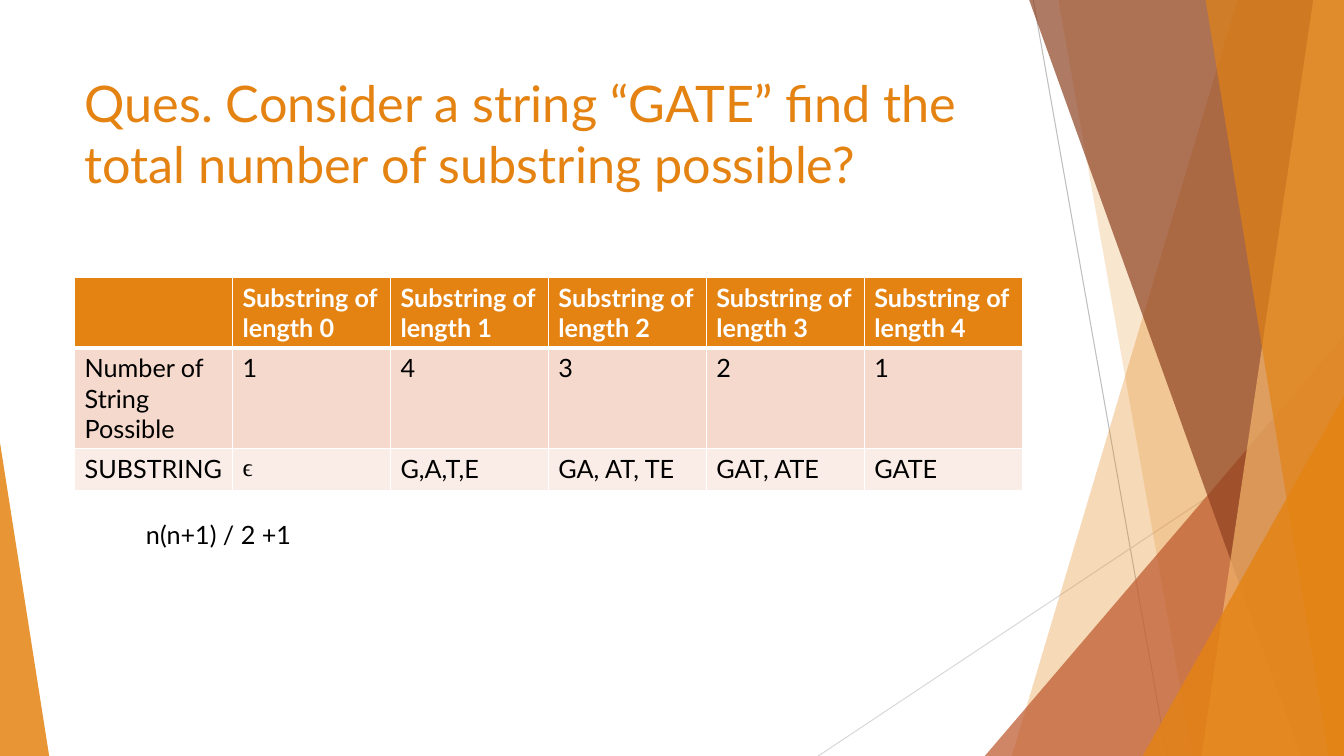
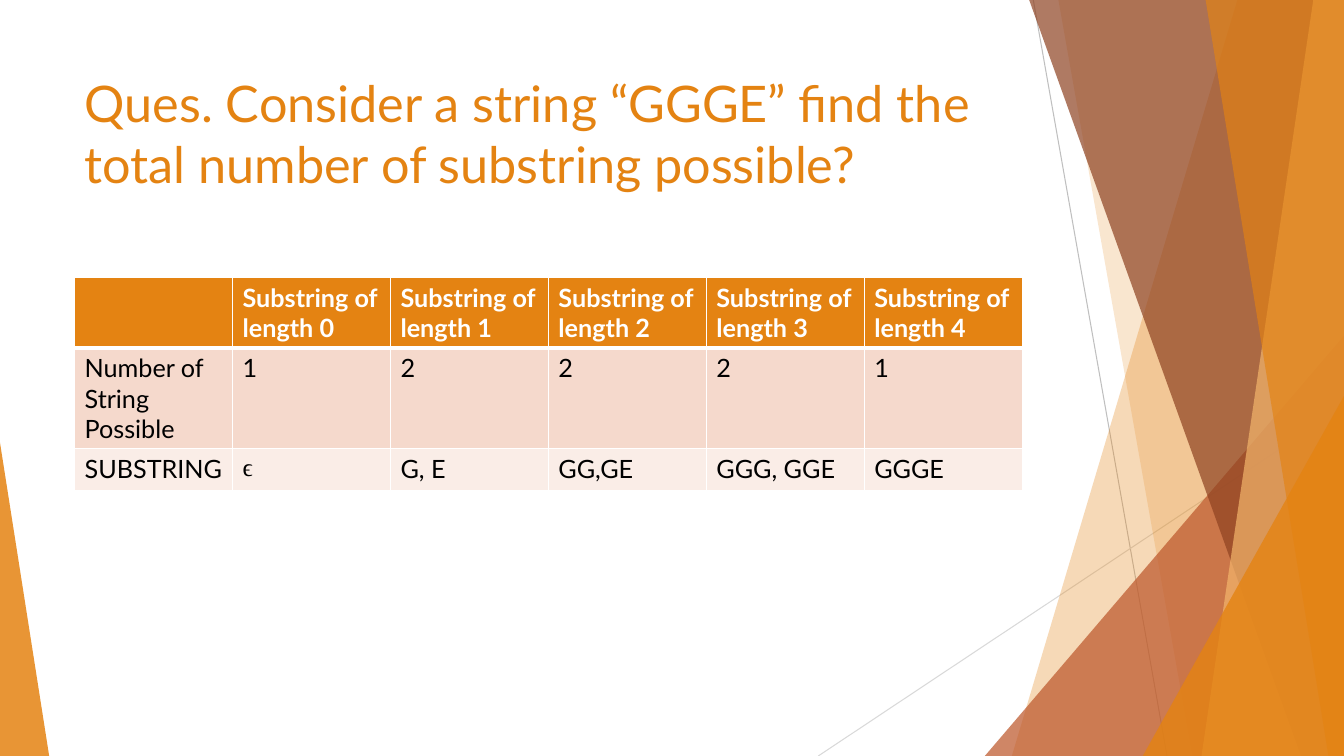
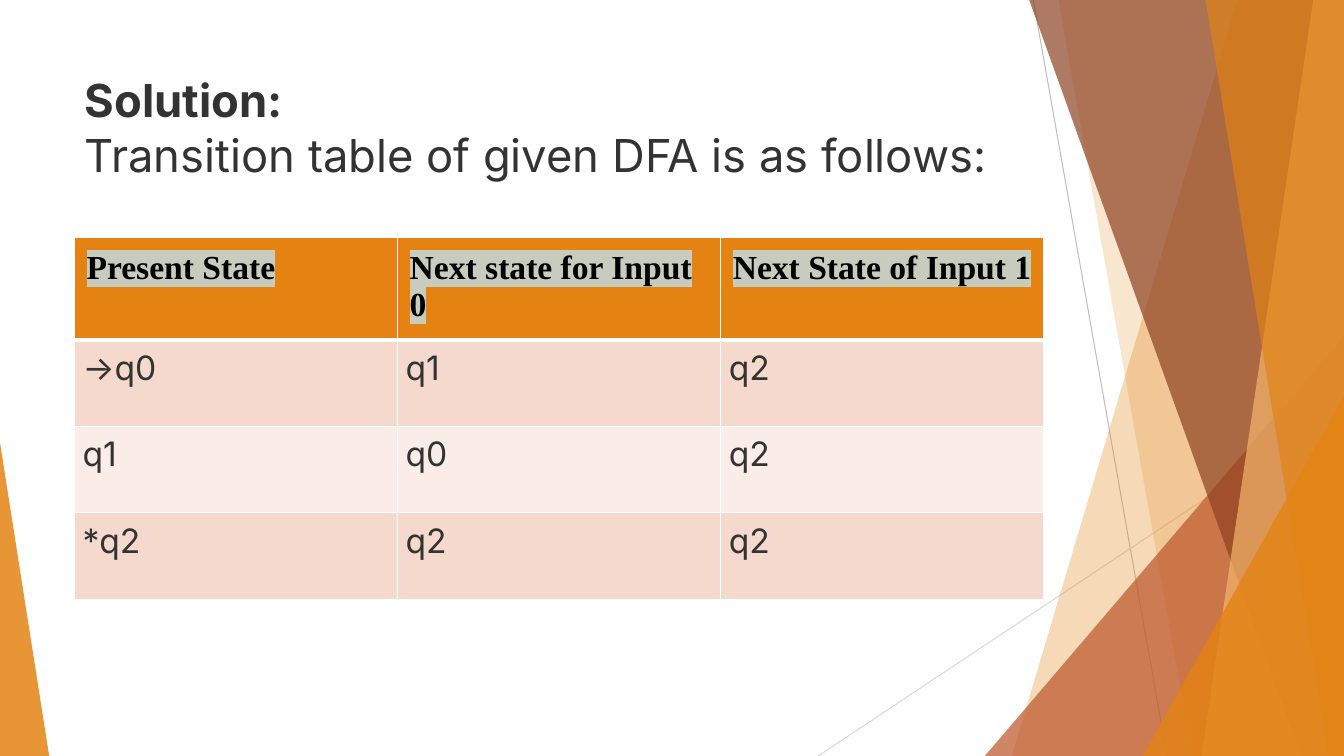
from lxml.etree import SubElement
from pptx import Presentation
from pptx.dml.color import RGBColor
from pptx.enum.shapes import MSO_CONNECTOR, MSO_SHAPE
from pptx.enum.text import MSO_ANCHOR, MSO_AUTO_SIZE, PP_ALIGN
from pptx.oxml import parse_xml
from pptx.oxml.ns import nsdecls, qn
from pptx.util import Cm, Pt

WIDTH, HEIGHT = 33.87, 19.05
LEFT, CONTENT_WIDTH = 1.88, 23.88
WHITE, BLACK, DARK = "FFFFFF", "000000", "333333"
ORANGE, RUST, BROWN, PEACH = "E48312", "BD582C", "8E4221", "F3B56C"
ROW_FILLS = ["F5D9CC", "FAEDE7"]

TITLE = {"name": "Lato", "size": Pt(36), "color": ORANGE, "bold": False}
SOLUTION = {"name": "Inter", "size": Pt(32.4), "color": DARK, "bold": False}
TEXT = {"name": "Lato", "size": Pt(18), "color": BLACK, "bold": False}
HEAD = {**TEXT, "color": WHITE, "bold": True}
SYMBOL = {**TEXT, "name": "Times New Roman"}
STATE = {**SOLUTION, "size": Pt(24)}
STATE_HEAD = {**SYMBOL, "size": Pt(24), "bold": True, "highlight": "C7CCBE"}


def rgb(value):
    return RGBColor.from_string(value)


class Deck:
    """Holds the shared style and the current slide."""

    def __init__(self):
        self.prs = Presentation()
        self.prs.slide_width, self.prs.slide_height = Cm(WIDTH), Cm(HEIGHT)
        self.layout = self.prs.slide_layouts[5]
        self.slide = None
        title = self.layout.placeholders[0]
        self.place(title, LEFT, 1.7, CONTENT_WIDTH, 3.66)

    def place(self, sp, *box):
        for name, value in zip(("left", "top", "width", "height"), box):
            setattr(sp, name, Cm(value))

    def add_slide(self, lines):
        """Start a slide whose title is a list of (text, style) lines."""
        first = self.slide is None
        self.slide = self.prs.slides.add_slide(self.layout)
        if first:
            self.decorate_layout()
        tf = self.slide.shapes.title.text_frame
        tf.auto_size = MSO_AUTO_SIZE.NONE
        tf.vertical_anchor = MSO_ANCHOR.TOP
        p = tf.paragraphs[0]
        p.alignment = PP_ALIGN.LEFT
        for i, (text, style) in enumerate(lines):
            if i:
                p.add_line_break()
            self.run(p, text, style)

    def decorate_layout(self):
        """Draw the side panels, then move them into the layout."""
        self.line(26.04, 0, 29.41, HEIGHT, "BFBFBF")
        self.line(WIDTH, 10.24, 20.62, HEIGHT, "D9D9D9")
        self.band(31.19, 25.5, ORANGE, 30)
        self.band(26.67, 30.05, ORANGE, 20)
        self.triangle(24.82, 8.46, 9.05, 1, RUST, 72)
        self.band(25.93, 32.79, BROWN, 70)
        self.band(33.1, 30.28, PEACH, 70)
        self.band(30.38, 33.48, ORANGE, 65)
        self.triangle(28.8, 9.98, 5.07, 1, ORANGE, 80)
        self.triangle(0, 11.15, 1.24, 0, ORANGE, 85)
        panels = [sp for sp in self.slide.shapes if not sp.is_placeholder]
        for i, sp in enumerate(panels):
            sp.element.find(".//" + qn("p:cNvPr")).set("id", str(100 + i))
            self.layout.shapes.element.insert(2 + i, sp.element)

    def line(self, x1, y1, x2, y2, color):
        ln = self.slide.shapes.add_connector(
            MSO_CONNECTOR.STRAIGHT, Cm(x1), Cm(y1), Cm(x2), Cm(y2))
        ln.line.width = Pt(0.75)
        ln.line.color.rgb = rgb(color)
        SubElement(ln.element.spPr, qn("a:effectLst"))

    def band(self, top_x, bottom_x, color, opacity):
        """Fill from a slanted left edge to the right edge of the slide."""
        top = Cm(-0.02)
        builder = self.slide.shapes.build_freeform(Cm(top_x), top)
        builder.add_line_segments([
            (Cm(WIDTH), top), (Cm(WIDTH), Cm(HEIGHT)),
            (Cm(bottom_x), Cm(HEIGHT))])
        self.fill(builder.convert_to_shape(), color, opacity)

    def triangle(self, left, top, width, apex, color, opacity):
        sp = self.slide.shapes.add_shape(
            MSO_SHAPE.ISOSCELES_TRIANGLE,
            Cm(left), Cm(top), Cm(width), Cm(HEIGHT - top))
        sp.adjustments[0] = apex
        self.fill(sp, color, opacity)

    def fill(self, sp, color, opacity):
        sp.shadow.inherit = False
        sp.line.fill.background()
        sp.fill.solid()
        sp.fill.fore_color.rgb = rgb(color)
        clr = sp.element.spPr.find(qn("a:solidFill"))[0]
        SubElement(clr, qn("a:alpha"), val=str(opacity * 1000))

    def run(self, p, text, style):
        r = p.add_run()
        r.text = text
        for name, value in style.items():
            if name == "color":
                r.font.color.rgb = rgb(value)
            elif name == "highlight":
                mark = parse_xml(f'<a:highlight {nsdecls("a")}>'
                                 f'<a:srgbClr val="{value}"/></a:highlight>')
                r.font._element.find(qn("a:latin")).addprevious(mark)
            else:
                setattr(r.font, name, value)

    def text(self, text, *box):
        sp = self.slide.shapes.add_textbox(*map(Cm, box))
        tf = sp.text_frame
        tf.word_wrap = True
        tf.auto_size = MSO_AUTO_SIZE.SHAPE_TO_FIT_TEXT
        self.run(tf.paragraphs[0], text, TEXT)

    def table(self, rows, top, width, heights, head, body, insets=None, align=None):
        """Add a table; insets gives the margin of head and body cells."""
        n = len(rows[0])
        tbl = self.slide.shapes.add_table(
            len(rows), n, Cm(LEFT), Cm(top), Cm(width), Cm(sum(heights))).table
        for col in tbl.columns:
            col.width = Cm(width / n)
        for i, (row, height) in enumerate(zip(rows, heights)):
            tbl.rows[i].height = Cm(height)
            for j, text in enumerate(row):
                cell = tbl.cell(i, j)
                cell.fill.solid()
                cell.fill.fore_color.rgb = rgb(ROW_FILLS[(i - 1) % 2] if i else ORANGE)
                self.borders(cell, i)
                if insets:
                    for side in ("left", "right", "top", "bottom"):
                        setattr(cell, f"margin_{side}", Cm(insets[min(i, 1)]))
                p = cell.text_frame.paragraphs[0]
                if i and align is not None:
                    p.alignment = align
                if text:
                    style = SYMBOL if text == "ϵ" else body if i else head
                    self.run(p, text, style)

    def borders(self, cell, row):
        """White edges, heavier between the head and the first body row."""
        widths = {"L": 1, "R": 1, "T": 3 if row == 1 else 1, "B": 1 if row else 3}
        tcPr = cell._tc.get_or_add_tcPr()
        for i, (side, width) in enumerate(widths.items()):
            tcPr.insert(i, parse_xml(
                f'<a:ln{side} {nsdecls("a")} w="{Pt(width)}"><a:solidFill>'
                f'<a:srgbClr val="{WHITE}"/></a:solidFill></a:ln{side}>'))

    def substring_question(self, word, counts, substrings):
        self.add_slide([(f"Ques. Consider a string “{word}” find the "
                         "total number of substring possible?", TITLE)])
        rows = [
            [""] + [f"Substring of length {k}" for k in range(len(counts))],
            ["Number of String Possible", *counts],
            ["SUBSTRING", *substrings],
        ]
        self.table(rows, 6.99, CONTENT_WIDTH, [1.78, 2.54, 1.04], HEAD, TEXT)


def main():
    deck = Deck()
    deck.substring_question(
        "GATE", "14321", ["ϵ", "G,A,T,E", "GA, AT, TE", "GAT, ATE", "GATE"])
    deck.text("n(n+1) / 2 +1", 3.43, 12.95, 21.44, 1.02)

    deck.substring_question(
        "GGGE", "12221", ["ϵ", "G, E", "GG,GE", "GGG, GGE", "GGGE"])

    deck.add_slide([("Solution:", {**SOLUTION, "bold": True}),
                    ("Transition table of given DFA is as follows:", SOLUTION)])
    transitions = [
        ["Present State", "Next state for Input 0", "Next State of Input 1"],
        ["→q0", "q1", "q2"],
        ["q1", "q0", "q2"],
        ["*q2", "q2", "q2"],
    ]
    deck.table(transitions, 5.99, 24.43, [2.57] + [2.18] * 3, STATE_HEAD, STATE,
               insets=(0.3, 0.2), align=PP_ALIGN.JUSTIFY)
    deck.prs.save("out.pptx")


if __name__ == "__main__":
    main()
